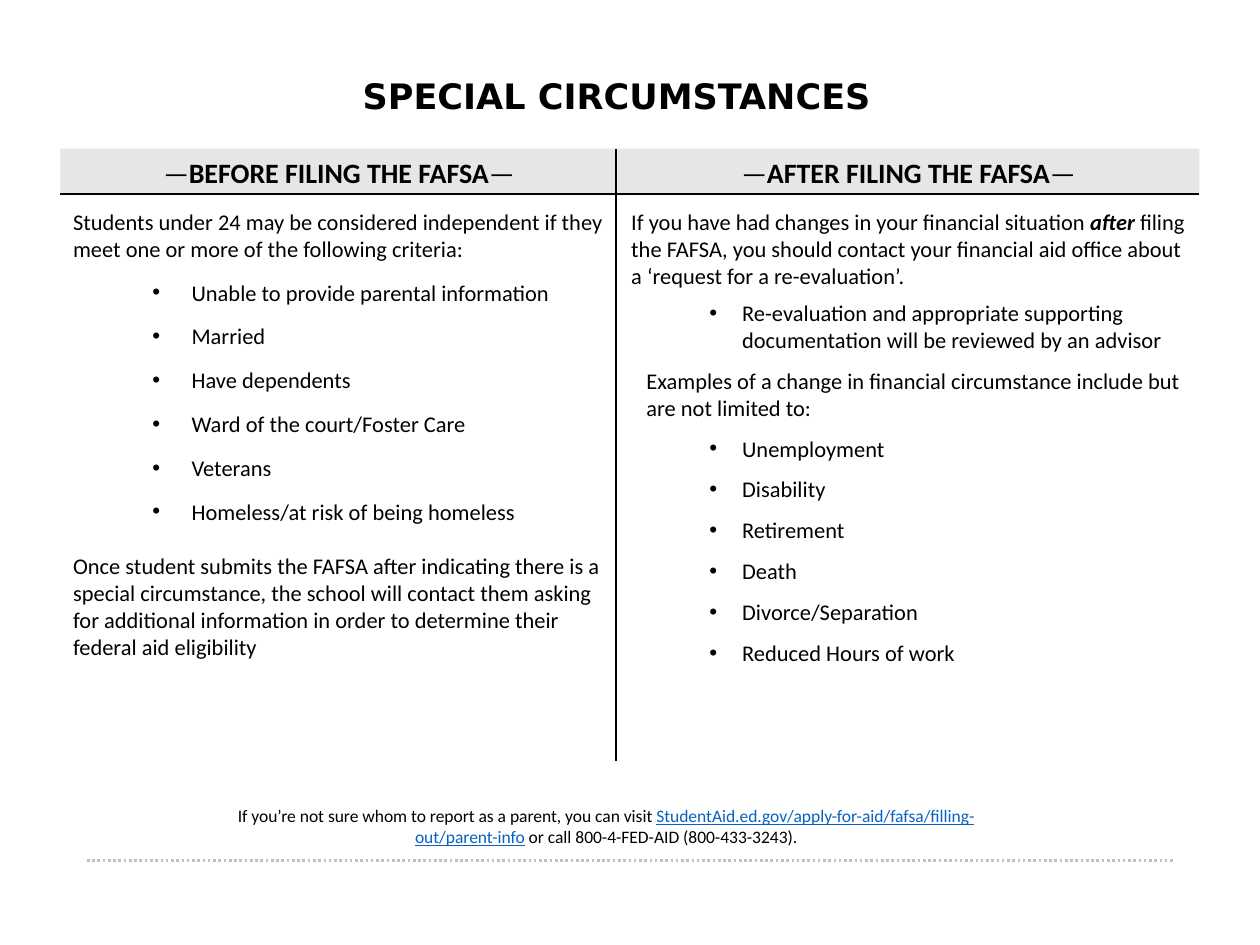
from dataclasses import dataclass

from lxml.etree import SubElement
from pptx import Presentation
from pptx.dml.color import RGBColor
from pptx.enum.dml import MSO_LINE
from pptx.enum.shapes import MSO_CONNECTOR, MSO_SHAPE
from pptx.enum.text import MSO_ANCHOR, MSO_AUTO_SIZE, PP_ALIGN
from pptx.oxml.ns import qn
from pptx.util import Inches, Pt

BLACK, GRAY, LINK = "000000", "E7E6E6", "0563C1"
BODY_SIZE = 12.8


@dataclass(frozen=True)
class Run:
    text: str
    bold: bool = False
    italic: bool = False
    underline: bool = False
    color: str = BLACK


@dataclass(frozen=True)
class Style:
    """Paragraph layout: lengths in inches, spacing in points."""
    level: int = 0
    margin: float = 0
    indent: float = 0
    before: float = 0
    after: float = 0
    line_spacing: float = 1.0
    bullet: bool = False
    align: PP_ALIGN = PP_ALIGN.LEFT


@dataclass(frozen=True)
class Item:
    runs: tuple[Run, ...]
    style: Style


@dataclass(frozen=True)
class Column:
    left: float
    width: float
    text_left: float
    text_width: float
    text_height: float
    heading: str
    items: tuple[Item, ...]


CENTERED = Style(align=PP_ALIGN.CENTER)
LEFT_INTRO = Style(after=1)
LEFT_BULLET = Style(2, 0.94, -0.31, 1, 1, 1.5, True)
LEFT_CLOSING = Style(before=15, after=1)
RIGHT_INTRO = Style(after=2)
RIGHT_BULLET = Style(2, 0.88, -0.26, 4, 4, 1.0, True)
RIGHT_EXAMPLES = Style(1, 0.12, 0, 4, 4)


def plain(style: Style, *texts: str) -> tuple[Item, ...]:
    return tuple(Item((Run(text),), style) for text in texts)


COLUMNS = (
    Column(0.48, 4.42, 0.48, 4.42, 4.23, "BEFORE FILING THE FAFSA", (
        *plain(LEFT_INTRO, "Students under 24 may be considered independent if "
               "they meet one or more of the following criteria:"),
        *plain(LEFT_BULLET, "Unable to provide parental information", "Married",
               "Have dependents", "Ward of the court/Foster Care", "Veterans",
               "Homeless/at risk of being homeless"),
        *plain(LEFT_CLOSING, "Once student submits the FAFSA after indicating there is a "
               "special circumstance, the school will contact them asking for additional "
               "information in order to determine their federal aid eligibility"),
    )),
    Column(4.9, 4.62, 4.91, 4.6, 4.17, "AFTER FILING THE FAFSA", (
        Item((Run("If you have had changes in your financial situation "),
              Run("after ", bold=True, italic=True),
              Run("filing the FAFSA, you should contact your financial aid office "
                  "about a ‘request for a re-evaluation’.")), RIGHT_INTRO),
        *plain(RIGHT_BULLET, "Re-evaluation and appropriate supporting documentation "
               "will be reviewed by an advisor"),
        *plain(RIGHT_EXAMPLES, "Examples of a change in financial circumstance include "
               "but are not limited to:"),
        *plain(RIGHT_BULLET, "Unemployment", "Disability", "Retirement", "Death",
               "Divorce/Separation", "Reduced Hours of work"),
    )),
)
FOOTNOTE = Item((
    Run("If you’re not sure whom to report as a parent, you can visit "),
    Run("StudentAid.ed.gov/apply-for-aid/fafsa/filling-out/parent-info",
        underline=True, color=LINK),
    Run(" or call 800-4-FED-AID (800-433-3243)."),
), CENTERED)


def rgb(color: str) -> RGBColor:
    return RGBColor.from_string(color)


def set_attributes(target, values: dict) -> None:
    for name, value in values.items():
        setattr(target, name, value)


def place(shape, left: float, top: float, width: float, height: float) -> None:
    set_attributes(shape, {"left": Inches(left), "top": Inches(top),
                           "width": Inches(width), "height": Inches(height)})


def write(shape, items: tuple[Item, ...], size: float, font: str = "Calibri",
          anchor: MSO_ANCHOR = MSO_ANCHOR.TOP) -> None:
    frame = shape.text_frame
    set_attributes(frame, {"word_wrap": True, "auto_size": MSO_AUTO_SIZE.NONE,
                           "vertical_anchor": anchor})
    for index, item in enumerate(items):
        paragraph = frame.add_paragraph() if index else frame.paragraphs[0]
        style = item.style
        set_attributes(paragraph, {
            "level": style.level, "alignment": style.align,
            "line_spacing": style.line_spacing,
            "space_before": Pt(style.before), "space_after": Pt(style.after)})
        properties = paragraph._p.get_or_add_pPr()
        properties.set("marL", str(Inches(style.margin)))
        properties.set("indent", str(Inches(style.indent)))
        if style.bullet:
            SubElement(properties, qn("a:buFont")).set("typeface", "Arial")
            SubElement(properties, qn("a:buChar")).set("char", "•")
        else:
            SubElement(properties, qn("a:buNone"))
        for part in item.runs:
            run = paragraph.add_run()
            run.text = part.text
            set_attributes(run.font, {
                "name": font, "size": Pt(size), "bold": part.bold,
                "italic": part.italic, "underline": part.underline})
            run.font.color.rgb = rgb(part.color)


def add_line(slide, start: tuple[float, float], end: tuple[float, float], color: str = BLACK,
             dash: MSO_LINE = MSO_LINE.SOLID) -> None:
    points = (Inches(value) for value in (*start, *end))
    connector = slide.shapes.add_connector(MSO_CONNECTOR.STRAIGHT, *points)
    set_attributes(connector.line, {"width": Pt(1.5), "dash_style": dash})
    connector.line.color.rgb = rgb(color)
    SubElement(connector._element.spPr, qn("a:effectLst"))


def add_heading(slide, column: Column) -> None:
    shape = slide.shapes.add_shape(MSO_SHAPE.RECTANGLE, 0, 0, 0, 0)
    place(shape, column.left, 1.18, column.width, 0.37)
    shape.shadow.inherit = False
    shape.fill.solid()
    shape.fill.fore_color.rgb = rgb(GRAY)
    shape.line.fill.background()
    runs = (Run("—"), Run(column.heading, bold=True), Run("—"))
    write(shape, (Item(runs, CENTERED),), 16, anchor=MSO_ANCHOR.MIDDLE)


def main() -> None:
    presentation = Presentation()
    set_attributes(presentation, {"slide_width": Inches(10), "slide_height": Inches(7.5)})
    slide = presentation.slides.add_slide(presentation.slide_layouts.get_by_name("Two Content"))
    title, *bodies = slide.placeholders

    add_line(slide, (0.69, 6.83), (9.32, 6.83), "C0C0C0", MSO_LINE.ROUND_DOT)
    place(title, 0.73, 0.54, 8.33, 0.44)
    write(title, (Item((Run("SPECIAL CIRCUMSTANCES", bold=True),), CENTERED),), 20, "DejaVu Sans")

    for body, column in zip(bodies, COLUMNS):
        place(body, column.text_left, 1.6, column.text_width, column.text_height)
        write(body, column.items, BODY_SIZE)
        add_heading(slide, column)
    add_line(slide, (4.89, 1.18), (4.89, 6.04))
    add_line(slide, (0.48, 1.54), (9.52, 1.54))

    footnote = slide.shapes.add_textbox(0, 0, 0, 0)
    place(footnote, 1.65, 6.34, 6.32, 0.44)
    write(footnote, (FOOTNOTE,), 10)
    presentation.save("out.pptx")


if __name__ == "__main__":
    main()
